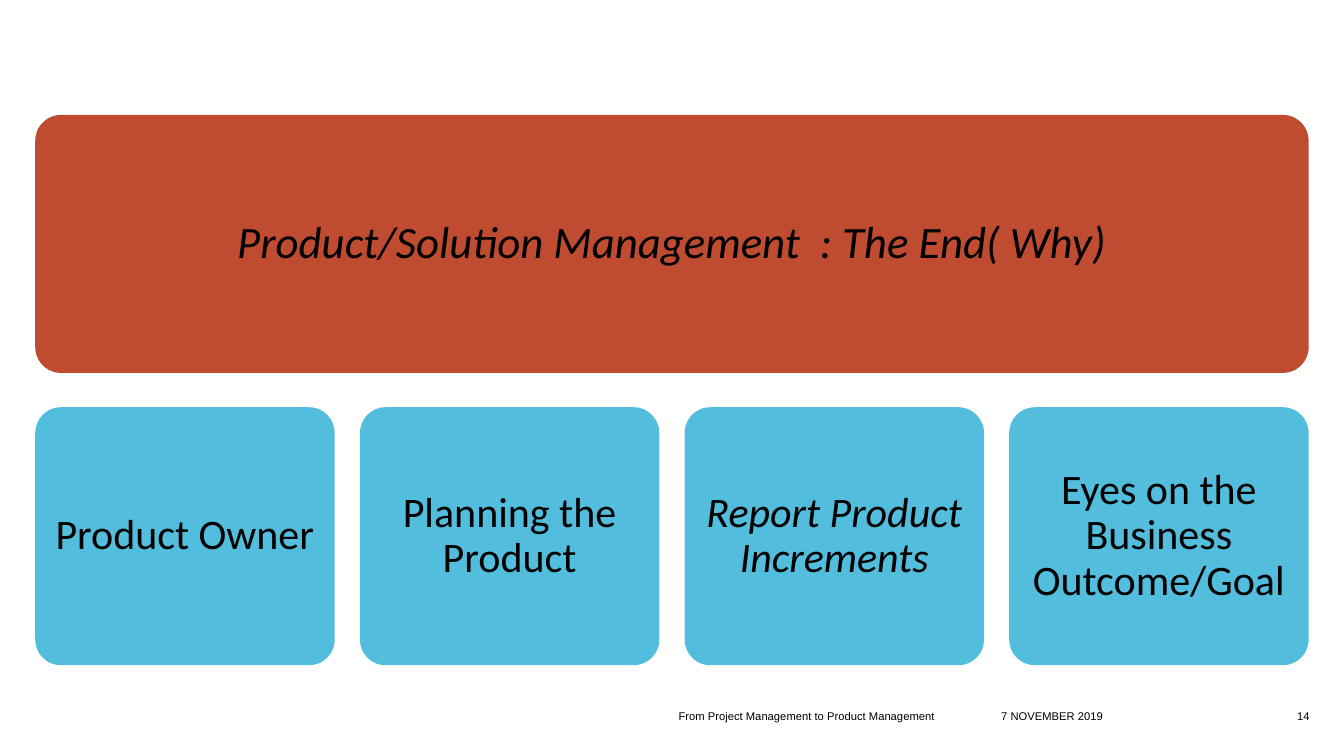
from dataclasses import dataclass

from pptx import Presentation
from pptx.dml.color import RGBColor
from pptx.enum.shapes import MSO_SHAPE as Preset
from pptx.enum.text import MSO_ANCHOR as Anchor, MSO_AUTO_SIZE as AutoSize, PP_ALIGN as Align
from pptx.shapes.autoshape import Shape
from pptx.slide import Slide
from pptx.text.text import TextFrame
from pptx.util import Inches, Pt


@dataclass(frozen=True)
class Theme:
    banner: RGBColor = RGBColor(0xBF, 0x4B, 0x31)
    card: RGBColor = RGBColor(0x52, 0xBD, 0xDC)
    ink: RGBColor = RGBColor(0, 0, 0)
    body_font: str = "Calibri"
    footer_font: str = "Arial"
    title_size: int = 32
    card_size: int = 30
    footer_size: int = 8


@dataclass(frozen=True)
class Grid:
    left: float = 0.35
    top: float = 1.14
    column: float = 2.97
    row: float = 2.56
    column_gap: float = 0.25
    row_gap: float = 0.34

    def cell(self, column: int, row: int, span: int = 1) -> tuple[float, ...]:
        """Return left, top, width and height in inches."""
        return (
            self.left + column * (self.column + self.column_gap),
            self.top + row * (self.row + self.row_gap),
            span * self.column + (span - 1) * self.column_gap,
            self.row,
        )


@dataclass(frozen=True)
class Card:
    text: str
    italic: bool = False


@dataclass(frozen=True)
class FooterItem:
    text: str
    left: float
    width: float
    align: Align = Align.LEFT


THEME = Theme()
GRID = Grid()
TITLE = "Product/Solution Management  : The End( Why)"
TITLE_PAD = 0.07
CARDS = [
    Card("Product Owner"),
    Card("Planning the Product"),
    Card("Report Product Increments", italic=True),
    Card("Eyes on the Business Outcome/Goal"),
]
FOOTER_TOP, FOOTER_HEIGHT = 6.95, 0.22
FOOTER = [
    FooterItem("7 NOVEMBER 2019", 9.93, 1.99),
    FooterItem("From Project Management to Product Management", 6.73, 3.06),
    FooterItem("14", 12.54, 0.45, Align.RIGHT),
]


def write(frame: TextFrame, text: str, font: str, size: int, align: Align,
          anchor: Anchor, inset: float = 0, italic: bool = False,
          line_spacing: float = 1.0) -> None:
    frame.word_wrap = True
    frame.auto_size = AutoSize.NONE
    frame.vertical_anchor = anchor
    frame.margin_left = frame.margin_right = Inches(inset)
    frame.margin_top = frame.margin_bottom = Inches(inset)
    para = frame.paragraphs[0]
    para.alignment = align
    para.line_spacing = line_spacing
    span = para.add_run()
    span.text = text
    span.font.name = font
    span.font.size = Pt(size)
    span.font.italic = italic
    span.font.color.rgb = THEME.ink


def add_panel(page: Slide, cell: tuple[float, ...], fill: RGBColor) -> Shape:
    panel = page.shapes.add_shape(Preset.ROUNDED_RECTANGLE, *map(Inches, cell))
    panel.adjustments[0] = 0.1
    panel.shadow.inherit = False
    panel.fill.solid()
    panel.fill.fore_color.rgb = fill
    panel.line.fill.background()
    return panel


def add_banner(page: Slide) -> None:
    """Draw the wide panel and lay the title placeholder over it."""
    panel = add_panel(page, GRID.cell(0, 0, span=len(CARDS)), THEME.banner)
    title = page.shapes.title
    panel.element.addnext(title.element)
    pad = Inches(TITLE_PAD)
    title.left, title.top = panel.left + pad, panel.top + pad
    title.width, title.height = panel.width - 2 * pad, panel.height - 2 * pad
    write(title.text_frame, TITLE, THEME.body_font, THEME.title_size,
          Align.CENTER, Anchor.MIDDLE, inset=0.13, italic=True, line_spacing=0.9)


def add_card(page: Slide, column: int, card: Card) -> None:
    panel = add_panel(page, GRID.cell(column, 1), THEME.card)
    write(panel.text_frame, card.text, THEME.body_font, THEME.card_size,
          Align.CENTER, Anchor.MIDDLE, inset=0.12, italic=card.italic, line_spacing=0.9)


def add_footer_item(page: Slide, item: FooterItem) -> None:
    box = page.shapes.add_textbox(
        *map(Inches, (item.left, FOOTER_TOP, item.width, FOOTER_HEIGHT)))
    write(box.text_frame, item.text, THEME.footer_font, THEME.footer_size,
          item.align, Anchor.BOTTOM)


def main() -> None:
    deck = Presentation()
    deck.slide_width, deck.slide_height = Inches(13.33), Inches(7.5)
    page = deck.slides.add_slide(deck.slide_layouts.get_by_name("Title Only"))
    add_banner(page)
    for column, card in enumerate(CARDS):
        add_card(page, column, card)
    for item in FOOTER:
        add_footer_item(page, item)
    deck.save("out.pptx")


if __name__ == "__main__":
    main()
